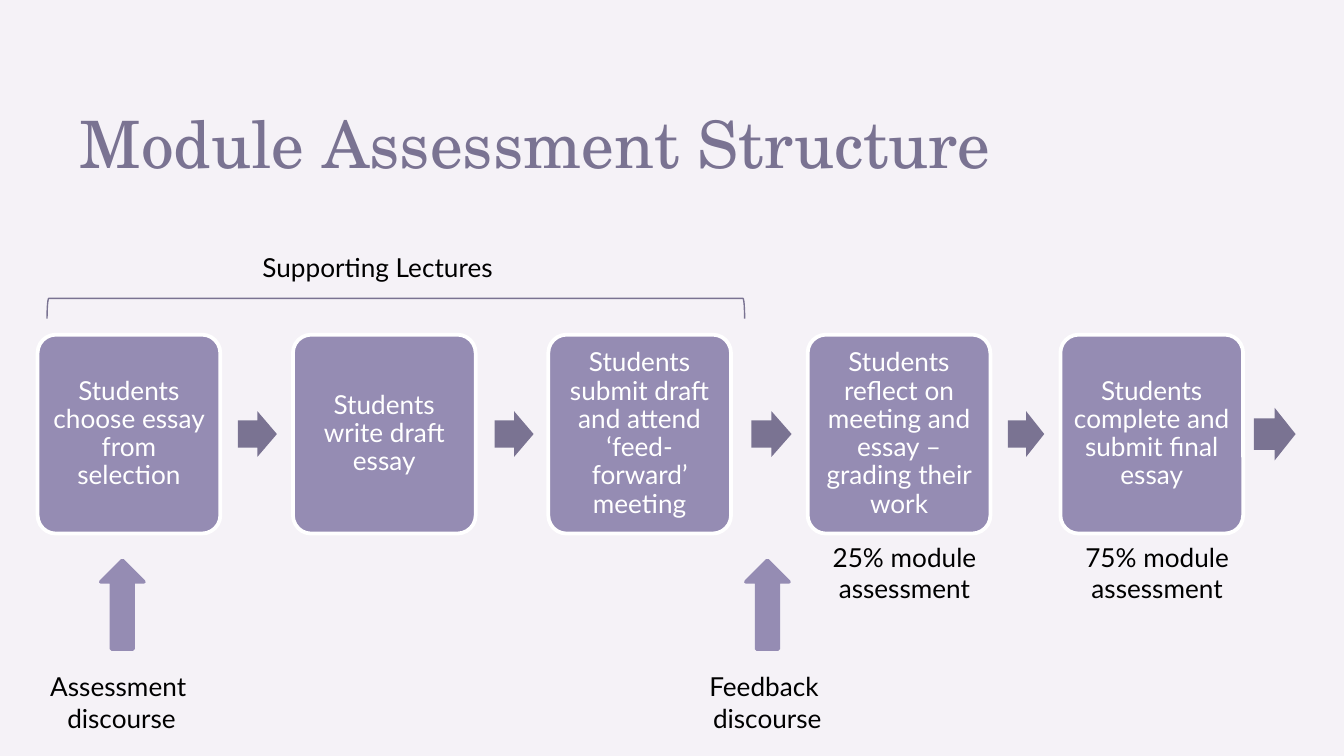
"""Build the module assessment structure slide."""
from lxml import etree
from pptx import Presentation
from pptx.dml.color import RGBColor
from pptx.enum.shapes import MSO_SHAPE
from pptx.enum.text import MSO_ANCHOR, MSO_AUTO_SIZE, PP_ALIGN
from pptx.oxml.ns import qn
from pptx.util import Inches, Pt

ROUNDED = MSO_SHAPE.ROUNDED_RECTANGLE
RIGHT_ARROW = MSO_SHAPE.RIGHT_ARROW
UP_ARROW = MSO_SHAPE.UP_ARROW
LEFT_BRACKET = MSO_SHAPE.LEFT_BRACKET
TOP, MIDDLE = MSO_ANCHOR.TOP, MSO_ANCHOR.MIDDLE
LEFT, CENTER = PP_ALIGN.LEFT, PP_ALIGN.CENTER
NO_AUTOFIT = MSO_AUTO_SIZE.NONE

BACKGROUND = RGBColor(0xE6, 0xE0, 0xEC)
PURPLE = RGBColor(0x95, 0x8C, 0xB3)
DARK_PURPLE = RGBColor(0x7A, 0x73, 0x92)
WHITE = RGBColor(0xFF, 0xFF, 0xFF)
BLACK = RGBColor(0x00, 0x00, 0x00)

STEP_TOP, STEP_WIDTH, STEP_HEIGHT = 2.49, 1.36, 1.48
STEPS = [
    (0.28, "Students choose essay from selection"),
    (2.18, "Students write draft essay"),
    (4.08, "Students submit draft and attend ‘feed-forward’ meeting"),
    (6.01, "Students reflect on meeting and essay – grading their work"),
    (7.89, "Students complete and submit final essay"),
]
STEP_ARROWS = [
    (1.77, 0.29, 0.34),
    (3.68, 0.29, 0.34),
    (5.59, 0.3, 0.34),
    (7.5, 0.27, 0.34),
    (9.33, 0.31, 0.39),
]
LABELS = [
    (0.2, 1.82, 5.22, 0.34, "Supporting Lectures"),
    (-0.21, 4.94, 2.23, 0.57, "Assessment \ndiscourse"),
    (4.56, 4.94, 2.3, 0.57, "Feedback \ndiscourse"),
    (5.79, 3.98, 1.88, 0.57, "25% module assessment"),
    (7.67, 3.98, 1.88, 0.57, "75% module assessment"),
]


def add_shape(kind, left, top, width, height, fill=None, line=None, line_width=2):
    shape = slide.shapes.add_shape(
        kind, Inches(left), Inches(top), Inches(width), Inches(height))
    shape.shadow.inherit = False
    if fill is None:
        shape.fill.background()
    else:
        shape.fill.solid()
        shape.fill.fore_color.rgb = fill
    if line is None:
        shape.line.fill.background()
    else:
        shape.line.color.rgb = line
        shape.line.width = Pt(line_width)
    return shape


def write_text(text_frame, text, color, size=14, font="Lato", alignment=CENTER):
    text_frame.text = text
    text_frame.word_wrap = True
    for paragraph in text_frame.paragraphs:
        paragraph.alignment = alignment
        for run in paragraph.runs:
            run.font.name = font
            run.font.size = Pt(size)
            run.font.color.rgb = color


presentation = Presentation()
presentation.slide_width = Inches(10)
presentation.slide_height = Inches(10 * 9 / 16)
slide = presentation.slides.add_slide(presentation.slide_layouts[5])
slide.background.fill.solid()
slide.background.fill.fore_color.rgb = BACKGROUND
background_color = next(slide.element.iter(qn("a:srgbClr")))
etree.SubElement(background_color, qn("a:alpha")).set("val", "40000")

title = slide.shapes.title
title.left, title.top = Inches(0.59), Inches(0.77)
title.width, title.height = Inches(7.69), Inches(0.53)
title_frame = title.text_frame
write_text(title_frame, "Module Assessment Structure", DARK_PURPLE, 35,
           "TeX Gyre Schola", LEFT)
title_frame.auto_size = NO_AUTOFIT
title_frame.vertical_anchor = TOP
title_frame.margin_left = title_frame.margin_right = 0
title_frame.margin_top = title_frame.margin_bottom = 0
title_frame.paragraphs[0].line_spacing = Pt(42)

for left, text in STEPS:
    step = add_shape(ROUNDED, left, STEP_TOP, STEP_WIDTH, STEP_HEIGHT, PURPLE, WHITE)
    step.adjustments[0] = 0.1
    step_frame = step.text_frame
    write_text(step_frame, text, WHITE)
    step_frame.vertical_anchor = MIDDLE
    step_frame.margin_left = step_frame.margin_right = Inches(0.06)
    step_frame.margin_top = step_frame.margin_bottom = Inches(0.06)
    step_frame.paragraphs[0].line_spacing = 0.9

step_middle = STEP_TOP + STEP_HEIGHT / 2
for left, width, height in STEP_ARROWS:
    arrow = add_shape(RIGHT_ARROW, left, step_middle - height / 2, width, height,
                      DARK_PURPLE)
    arrow.adjustments[0] = 0.6
    arrow.adjustments[1] = 0.5

bracket = add_shape(LEFT_BRACKET, 2.87, -0.3, 0.15, 5.19, line=DARK_PURPLE,
                    line_width=0.75)
bracket.rotation = 90

for left in (0.75, 5.55):
    add_shape(UP_ARROW, left, 4.17, 0.32, 0.66, PURPLE, PURPLE)

for left, top, width, height, text in LABELS:
    label = slide.shapes.add_textbox(
        Inches(left), Inches(top), Inches(width), Inches(height))
    write_text(label.text_frame, text, BLACK)

presentation.save("out.pptx")
